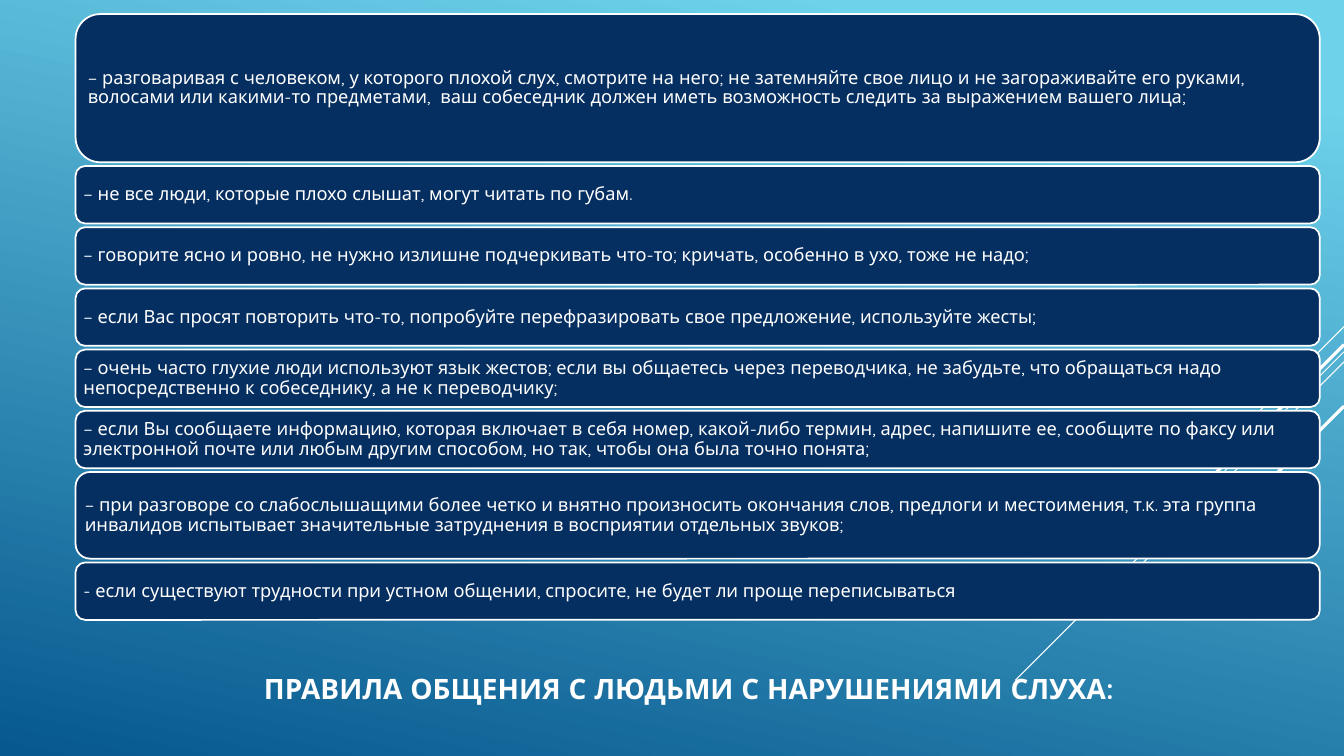
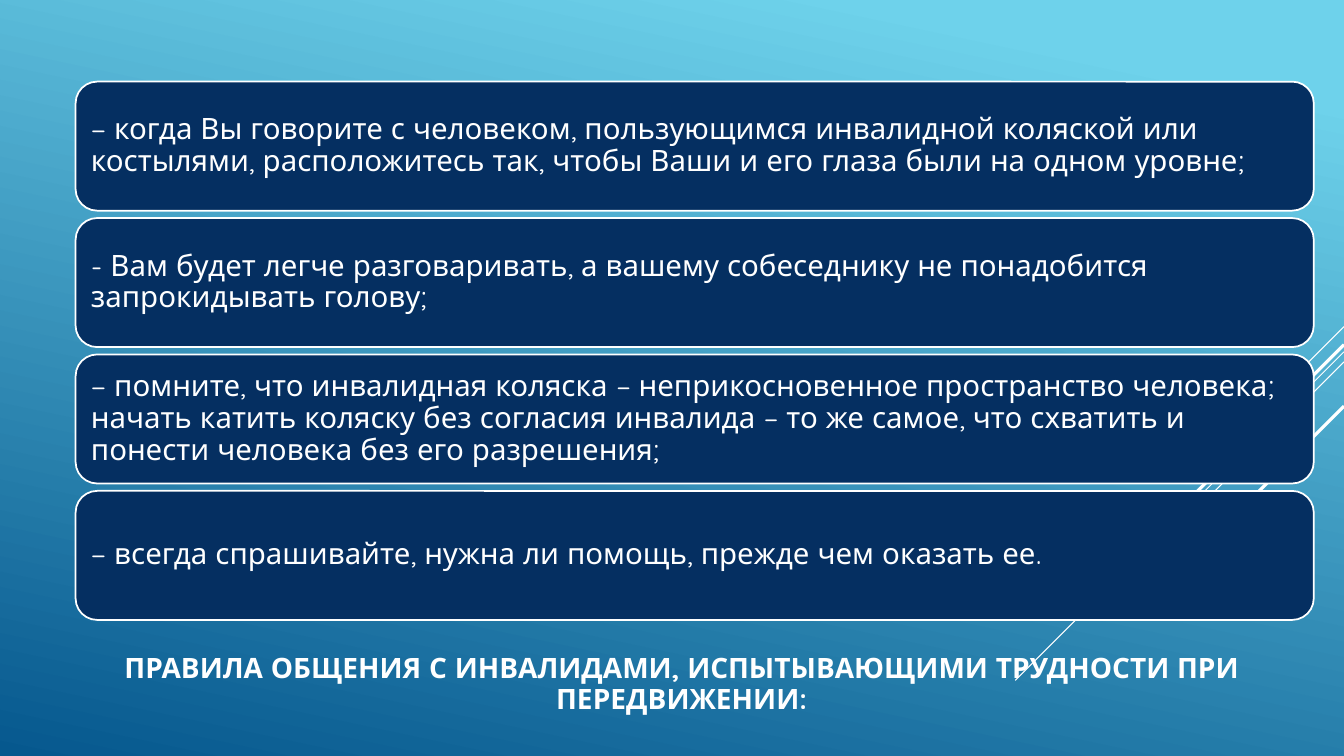
from lxml import etree
from pptx import Presentation
from pptx.dml.color import RGBColor
from pptx.enum.shapes import MSO_CONNECTOR, MSO_SHAPE
from pptx.enum.text import MSO_ANCHOR, MSO_AUTO_SIZE, PP_ALIGN
from pptx.oxml.ns import qn
from pptx.util import Inches, Pt

COLORS = {"sky": "6ED2EB", "sea": "06588E", "navy": "052F61", "white": "FFFFFF"}
FONT = "Quicksand"
SLIDE_WIDTH, SLIDE_HEIGHT = 13.33, 7.5
CARD_LEFT, CARDS_BOTTOM = 0.75, 6.15

# Diagonals run down-left at 45° from the right edge: (start y, reach, points)
DIAGONALS = [
    (3.24, 1.0, 0.75),
    (3.49, 3.26, 0.75),
    (3.59, 2.07, 0.75),
    (3.42, 1.91, 2.25),
    (4.03, 1.39, 2.25),
]

# Each card is (height, text)
SLIDES = [
    {
        "title": "ПРАВИЛА ОБЩЕНИЯ С ЛЮДЬМИ С НАРУШЕНИЯМИ СЛУХА: ",
        "title_at": (0.75, 6.47, 12.24, 0.76),
        "top": 0.14, "width": 12.34, "size": 13, "margin": 0.05,
        "cards": [
            (1.47, "− разговаривая с человеком, у которого плохой слух, смотрите на него; "
                   "не затемняйте свое лицо и не загораживайте его руками, волосами или "
                   "какими-то предметами,  ваш собеседник должен иметь возможность следить "
                   "за выражением вашего лица;"),
            (0.57, "− не все люди, которые плохо слышат, могут читать по губам."),
            (0.57, "− говорите ясно и ровно, не нужно излишне подчеркивать что-то; "
                   "кричать, особенно в ухо, тоже не надо;"),
            (0.57, "− если Вас просят повторить что-то, попробуйте перефразировать свое "
                   "предложение, используйте жесты;"),
            (0.57, "− очень часто глухие люди используют язык жестов; если вы общаетесь "
                   "через переводчика, не забудьте, что обращаться надо непосредственно "
                   "к собеседнику, а не к переводчику;"),
            (0.57, "− если Вы сообщаете информацию, которая включает в себя номер, "
                   "какой-либо термин, адрес, напишите ее, сообщите по факсу или "
                   "электронной почте или любым другим способом, но так, чтобы она была "
                   "точно понята;"),
            (0.86, "− при разговоре со слабослышащими более четко и внятно произносить "
                   "окончания слов, предлоги и местоимения, т.к. эта группа инвалидов "
                   "испытывает значительные затруднения в восприятии отдельных звуков;"),
            (0.57, "- если существуют трудности при устном общении, спросите, не будет ли "
                   "проще переписываться"),
        ],
    },
    {
        "title": "ПРАВИЛА ОБЩЕНИЯ С ИНВАЛИДАМИ, ИСПЫТЫВАЮЩИМИ ТРУДНОСТИ ПРИ ПЕРЕДВИЖЕНИИ:",
        "title_at": (0.49, 6.36, 12.54, 0.87),
        "top": 0.81, "width": 12.28, "size": 21, "margin": 0.09,
        "cards": [
            (1.28, "− когда Вы говорите с человеком, пользующимся инвалидной коляской или "
                   "костылями, расположитесь так, чтобы Ваши и его глаза были на одном "
                   "уровне;"),
            (1.28, "- Вам будет легче разговаривать, а вашему собеседнику не понадобится "
                   "запрокидывать голову;"),
            (1.28, "− помните, что инвалидная коляска – неприкосновенное пространство "
                   "человека; начать катить коляску без согласия инвалида – то же самое, "
                   "что схватить и понести человека без его разрешения;"),
            (1.28, "− всегда спрашивайте, нужна ли помощь, прежде чем оказать ее."),
        ],
    },
]


def rgb(name):
    return RGBColor.from_string(COLORS[name])


def set_text(shape, text, size, bold, align):
    frame = shape.text_frame
    frame.word_wrap = True
    frame.auto_size = MSO_AUTO_SIZE.NONE
    frame.vertical_anchor = MSO_ANCHOR.MIDDLE
    para = frame.paragraphs[0]
    para.alignment = align
    para.line_spacing = 0.9
    span = para.add_run()
    span.text = text
    for name, value in {"name": FONT, "size": Pt(size), "bold": bold}.items():
        setattr(span.font, name, value)
    span.font.color.rgb = rgb("white")


def paint_background(master):
    fill = master.background.fill
    fill.gradient()
    fill.gradient_angle = 360 - 102  # counter-clockwise
    for stop, color, position in zip(fill.gradient_stops, ("sky", "sea"), (0.1, 1)):
        stop.color.rgb = rgb(color)
        stop.position = position


def add_diagonals(master, slide):
    """Draw the lines on a slide, then move them to the master that all slides share."""
    for number, (top, reach, weight) in enumerate(DIAGONALS):
        line = slide.shapes.add_connector(
            MSO_CONNECTOR.STRAIGHT, Inches(SLIDE_WIDTH), Inches(top),
            Inches(SLIDE_WIDTH - reach), Inches(top + reach))
        line.line.color.rgb = rgb("white")
        line.line.width = Pt(weight)
        etree.SubElement(line.element.spPr, qn("a:effectLst"))
        line.element.nvCxnSpPr.cNvPr.id = 100 + number
        master.element.cSld.spTree.append(line.element)


def add_title(slide, content):
    title = slide.shapes.title
    for side, value in zip(("left", "top", "width", "height"), content["title_at"]):
        setattr(title, side, Inches(value))
    set_text(title, content["title"], 20, True, PP_ALIGN.CENTER)


def add_cards(slide, content):
    """Stack the cards with equal gaps between the top and the common bottom."""
    cards, top = content["cards"], content["top"]
    free = CARDS_BOTTOM - top - sum(height for height, _ in cards)
    gap = free / (len(cards) - 1)
    for height, text in cards:
        card = slide.shapes.add_shape(
            MSO_SHAPE.ROUNDED_RECTANGLE, Inches(CARD_LEFT), Inches(top),
            Inches(content["width"]), Inches(height))
        card.shadow.inherit = False
        card.fill.solid()
        card.fill.fore_color.rgb = rgb("navy")
        card.line.color.rgb = rgb("white")
        card.line.width = Pt(1.25)
        for side in ("left", "top", "right", "bottom"):
            setattr(card.text_frame, f"margin_{side}", Inches(content["margin"]))
        set_text(card, text, content["size"], False, PP_ALIGN.LEFT)
        top += height + gap


def main():
    deck = Presentation()
    deck.slide_width, deck.slide_height = Inches(SLIDE_WIDTH), Inches(SLIDE_HEIGHT)
    master = deck.slide_master
    title_only = deck.slide_layouts.get_by_name("Title Only")
    pages = [deck.slides.add_slide(title_only) for _ in SLIDES]
    paint_background(master)
    add_diagonals(master, pages[0])
    for page, content in zip(pages, SLIDES):
        add_title(page, content)
        add_cards(page, content)
    deck.save("out.pptx")


if __name__ == "__main__":
    main()
